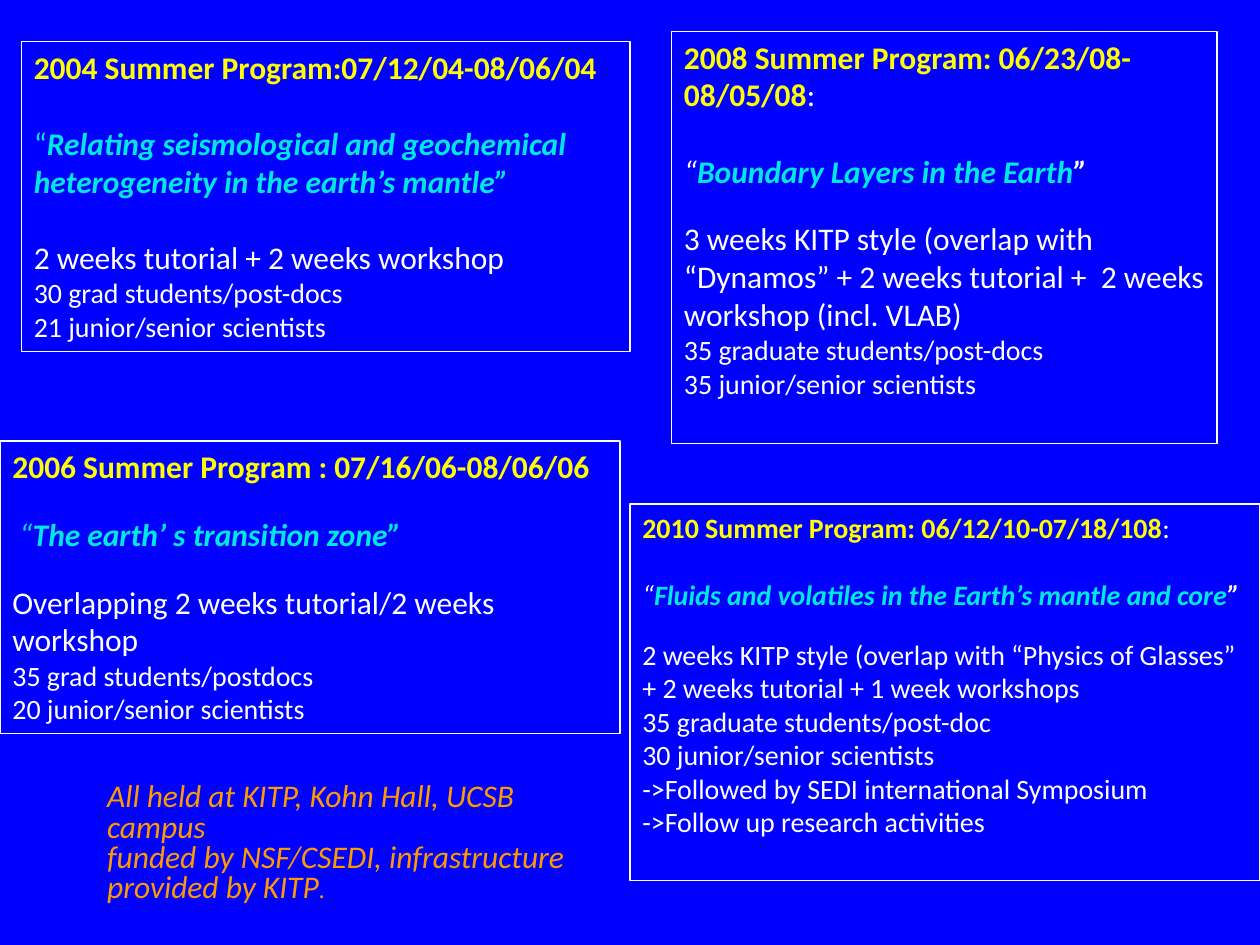
from pptx import Presentation
from pptx.dml.color import RGBColor
from pptx.enum.shapes import MSO_SHAPE
from pptx.enum.text import MSO_ANCHOR, PP_ALIGN
from pptx.util import Inches, Pt

COLORS = {"blue": "0000FF", "white": "FFFFFF", "yellow": "FFFF00",
          "cyan": "00E7E7", "orange": "FF9900"}
# style: colour, bold, italic
STYLES = {
    "heading": ("yellow", True, False),
    "body": ("white", False, False),
    "theme": ("cyan", True, True),
    "cyan quote": ("cyan", False, False),
    "cyan italic quote": ("cyan", False, True),
    "open quote": ("white", False, True),
    "close quote": ("white", True, True),
    "note": ("orange", False, True),
}
LINE_HEIGHT = 1.22  # Calibri line height relative to its size


def rgb(name):
    return RGBColor.from_string(COLORS[name])


def add_paragraphs(tf, paragraphs):
    """Fill tf from (gap size, font size, [(text, style), ...]) entries."""
    tf.word_wrap = True
    tf.vertical_anchor = MSO_ANCHOR.TOP
    for i, (gap, size, runs) in enumerate(paragraphs):
        p = tf.add_paragraph() if i else tf.paragraphs[0]
        p.alignment = PP_ALIGN.LEFT
        p.space_before = Pt(round(gap * LINE_HEIGHT, 1))
        for text, style in runs:
            color, bold, italic = STYLES[style]
            r = p.add_run()
            r.text = text
            r.font.name = "Calibri"
            r.font.size = Pt(size)
            r.font.bold = bold
            r.font.italic = italic
            r.font.color.rgb = rgb(color)


# Each program: box, heading runs, theme runs, details as (size, text),
# heading size, and the gaps above the theme and the details
PROGRAMS = [
    ((0.17, 0.33, 4.83, 2.46),
     [("2004 Summer Program:07/12/04-08/06/04", "heading")],
     [("“", "cyan quote"),
      ("Relating seismological and geochemical heterogeneity in the earth’s mantle”", "theme")],
     [(18, "2 weeks tutorial + 2 weeks workshop"),
      (16, "30 grad students/post-docs"),
      (16, "21 junior/senior scientists")],
     18, 18, 18),
    ((0, 3.5, 4.92, 2.32),
     [("2006 Summer Program : 07/16/06-08/06/06", "heading")],
     [(" “", "cyan italic quote"), ("The earth’ s transition zone”", "theme")],
     [(18, "Overlapping 2 weeks tutorial/2 weeks workshop"),
      (16, "35 grad students/postdocs"),
      (16, "20 junior/senior scientists")],
     18, 14, 14),
    ((5.33, 0.25, 4.33, 3.27),
     [("2008 Summer Program: 06/23/08-08/05/08", "heading"), (":", "body")],
     [("“", "open quote"), ("Boundary Layers in the Earth", "theme"), ("”", "close quote")],
     [(18, "3 weeks KITP style (overlap with “Dynamos” + 2 weeks tutorial +  "
           "2 weeks workshop (incl. VLAB)"),
      (16, "35 graduate students/post-docs"),
      (16, "35 junior/senior scientists")],
     18, 18, 14),
    ((5, 4, 5, 2.99),
     [("2010 Summer Program: 06/12/10-07/18/108", "heading"), (":", "body")],
     [("“", "open quote"), ("Fluids and volatiles in the Earth’s mantle and core", "theme"),
      ("”", "close quote")],
     [(16, "2 weeks KITP style (overlap with “Physics of Glasses” "
           "+ 2 weeks tutorial + 1 week workshops"),
      (16, "35 graduate students/post-doc"),
      (16, "30 junior/senior scientists"),
      (16, "->Followed by SEDI international Symposium"),
      (16, "->Follow up research activities")],
     16, 16, 12),
]

prs = Presentation()
prs.slide_width, prs.slide_height = Inches(10), Inches(7.5)
s = prs.slides.add_slide(prs.slide_layouts[6])
s.background.fill.solid()
s.background.fill.fore_color.rgb = rgb("blue")

for box, heading, theme, details, size, theme_gap, details_gap in PROGRAMS:
    sp = s.shapes.add_shape(MSO_SHAPE.RECTANGLE, *map(Inches, box))
    sp.shadow.inherit = False
    sp.fill.background()
    sp.line.color.rgb = rgb("white")
    sp.line.width = Pt(0.75)
    paragraphs = [(0, size, heading), (theme_gap, size, theme)]
    for i, (detail_size, text) in enumerate(details):
        paragraphs.append((0 if i else details_gap, detail_size, [(text, "body")]))
    add_paragraphs(sp.text_frame, paragraphs)

venue = s.shapes.add_textbox(Inches(0.25), Inches(6.17), Inches(4.58), Inches(1.08))
add_paragraphs(venue.text_frame, [
    (0, 18, [("All held at KITP, Kohn Hall, UCSB campus", "note")]),
    (0, 18, [("funded by NSF/CSEDI, infrastructure provided by KITP", "note"), (".", "note")]),
])
venue.text_frame.margin_left = Inches(0.6)
for p in venue.text_frame.paragraphs:
    p.line_spacing = 0.8
p.runs[-1].font.size = Pt(14)

prs.save("out.pptx")
